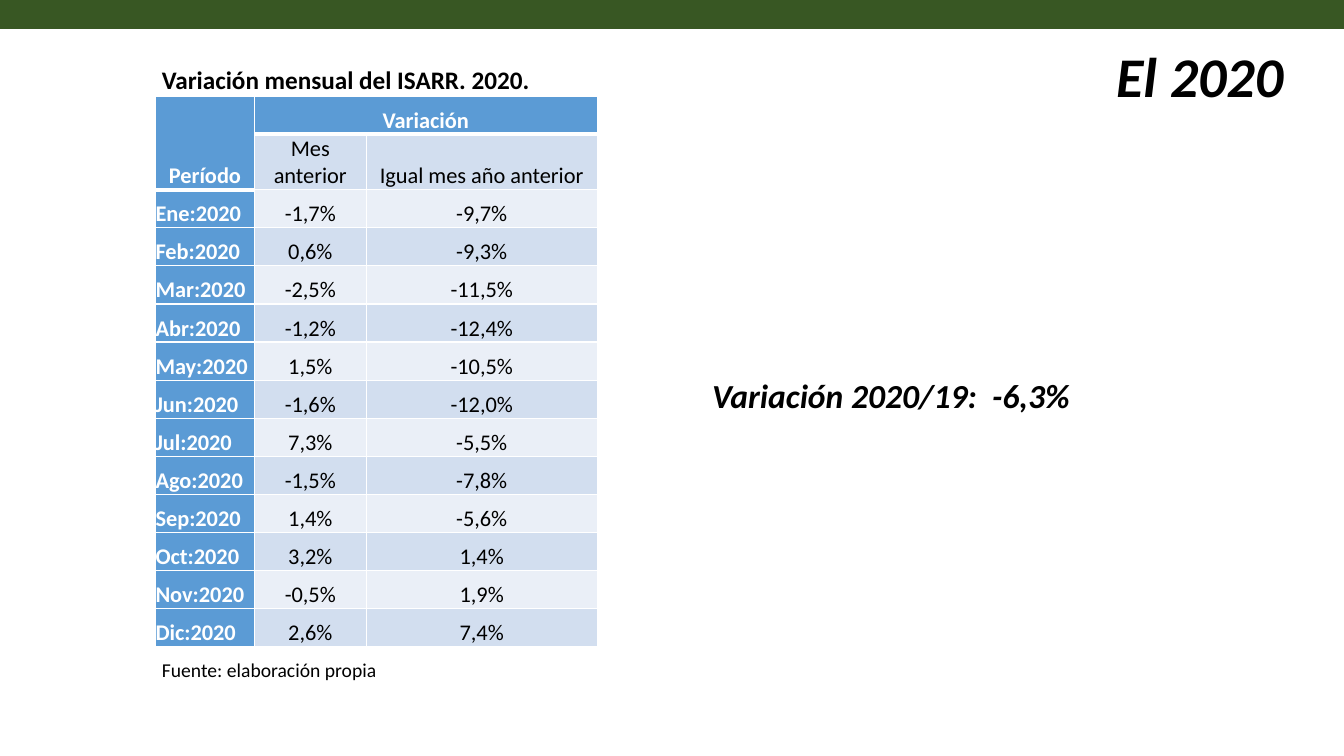
from lxml.etree import SubElement
from pptx import Presentation
from pptx.dml.color import RGBColor
from pptx.enum.shapes import MSO_SHAPE
from pptx.enum.text import MSO_ANCHOR, MSO_AUTO_SIZE, PP_ALIGN
from pptx.oxml.ns import qn
from pptx.util import Cm, Pt

GREEN, BLUE, WHITE, BLACK = "385723", "5B9BD5", "FFFFFF", "000000"
BANDS = ["EAEFF7", "D2DEEF"]
THICK_BELOW = {(0, 0), (0, 1), (0, 2), (1, 0)}
COLUMN_WIDTHS = [2.49, 2.82, 5.82]
ROW_HEIGHT = 0.96
WRAPPED_ROW_HEIGHT = 1.4

HEADERS = [
    ["Período", "Variación", ""],
    ["", "Mes anterior", "Igual mes año anterior"],
]
MONTHLY_CHANGES = [
    ["Ene:2020", "-1,7%", "-9,7%"],
    ["Feb:2020", "0,6%", "-9,3%"],
    ["Mar:2020", "-2,5%", "-11,5%"],
    ["Abr:2020", "-1,2%", "-12,4%"],
    ["May:2020", "1,5%", "-10,5%"],
    ["Jun:2020", "-1,6%", "-12,0%"],
    ["Jul:2020", "7,3%", "-5,5%"],
    ["Ago:2020", "-1,5%", "-7,8%"],
    ["Sep:2020", "1,4%", "-5,6%"],
    ["Oct:2020", "3,2%", "1,4%"],
    ["Nov:2020", "-0,5%", "1,9%"],
    ["Dic:2020", "2,6%", "7,4%"],
]


def color(value):
    return RGBColor.from_string(value)


class SlideBuilder:
    font_name = "Calibri"

    def __init__(self, slide):
        self.slide = slide

    def style(self, paragraph, size, fill=BLACK, bold=False, italic=False,
              align=PP_ALIGN.LEFT):
        font = paragraph.font
        font.name, font.size = self.font_name, Pt(size)
        font.bold, font.italic = bold, italic
        font.color.rgb = color(fill)
        paragraph.alignment = align

    def rectangle(self, left, top, width, height, fill):
        shape = self.slide.shapes.add_shape(
            MSO_SHAPE.RECTANGLE, Cm(left), Cm(top), Cm(width), Cm(height))
        shape.shadow.inherit = False
        shape.fill.solid()
        shape.fill.fore_color.rgb = color(fill)
        shape.line.fill.background()
        return shape

    def title(self, text, left, top, width, height):
        shape = self.rectangle(left, top, width, height, WHITE)
        paragraph = shape.text_frame.paragraphs[0]
        paragraph.text = text
        paragraph.line_spacing = 0.9
        self.style(paragraph, 40, bold=True, italic=True, align=PP_ALIGN.RIGHT)

    def text(self, text, left, top, width, height, size, wrap=True, **options):
        box = self.slide.shapes.add_textbox(
            Cm(left), Cm(top), Cm(width), Cm(height))
        frame = box.text_frame
        frame.word_wrap = wrap
        frame.auto_size = MSO_AUTO_SIZE.SHAPE_TO_FIT_TEXT
        paragraph = frame.paragraphs[0]
        paragraph.text = text
        self.style(paragraph, size, **options)

    def borders(self, cell, row, column):
        properties = cell._tc.get_or_add_tcPr()
        widths = {
            "a:lnL": 1,
            "a:lnR": 1,
            "a:lnT": 3 if (row - 1, column) in THICK_BELOW else 1,
            "a:lnB": 3 if (row, column) in THICK_BELOW else 1,
        }
        for tag, width in widths.items():
            line = SubElement(properties, qn(tag), w=str(Pt(width)))
            fill = SubElement(line, qn("a:solidFill"))
            SubElement(fill, qn("a:srgbClr"), val=WHITE)

    def cell(self, cell, text, row, column):
        is_heading = row == 0 or column == 0
        self.borders(cell, row, column)
        cell.fill.solid()
        cell.fill.fore_color.rgb = color(BLUE if is_heading else BANDS[row % 2])
        cell.vertical_anchor = MSO_ANCHOR.BOTTOM
        cell.margin_left = cell.margin_right = 0
        cell.margin_top = cell.margin_bottom = 0
        paragraph = cell.text_frame.paragraphs[0]
        paragraph.text = text
        is_month = column == 0 and row >= len(HEADERS)
        self.style(paragraph, 16, WHITE if is_heading else BLACK, is_heading,
                   align=PP_ALIGN.LEFT if is_month else PP_ALIGN.CENTER)

    def table(self, rows, left, top):
        heights = [ROW_HEIGHT] * len(rows)
        heights[1] = WRAPPED_ROW_HEIGHT
        table = self.slide.shapes.add_table(
            len(rows), len(COLUMN_WIDTHS), Cm(left), Cm(top),
            Cm(sum(COLUMN_WIDTHS)), Cm(sum(heights))).table
        for column, width in zip(table.columns, COLUMN_WIDTHS):
            column.width = Cm(width)
        for row, height in zip(table.rows, heights):
            row.height = Cm(height)
        for row, values in enumerate(rows):
            for column, value in enumerate(values):
                self.cell(table.cell(row, column), value, row, column)
        table.cell(0, 0).merge(table.cell(1, 0))
        table.cell(0, 1).merge(table.cell(0, 2))


def main():
    presentation = Presentation()
    presentation.slide_width, presentation.slide_height = Cm(33.87), Cm(19.05)
    slide = presentation.slides.add_slide(presentation.slide_layouts[6])
    builder = SlideBuilder(slide)
    builder.rectangle(0, 0, 33.87, 0.73, GREEN)
    builder.table(HEADERS + MONTHLY_CHANGES, 3.92, 2.42)
    builder.text("Variación 2020/19:  -6,3%", 17.7, 9.33, 9.65, 1.28, 24,
                 bold=True, italic=True)
    builder.text("Variación mensual del ISARR. 2020.", 3.83, 1.5, 11.15, 1.03,
                 18, bold=True)
    builder.text("Fuente: elaboración propia", 3.83, 16.46, 5.97, 0.85, 14,
                 wrap=False)
    builder.title("El 2020", 22.53, 1.14, 10.06, 1.73)
    presentation.save("out.pptx")


if __name__ == "__main__":
    main()
